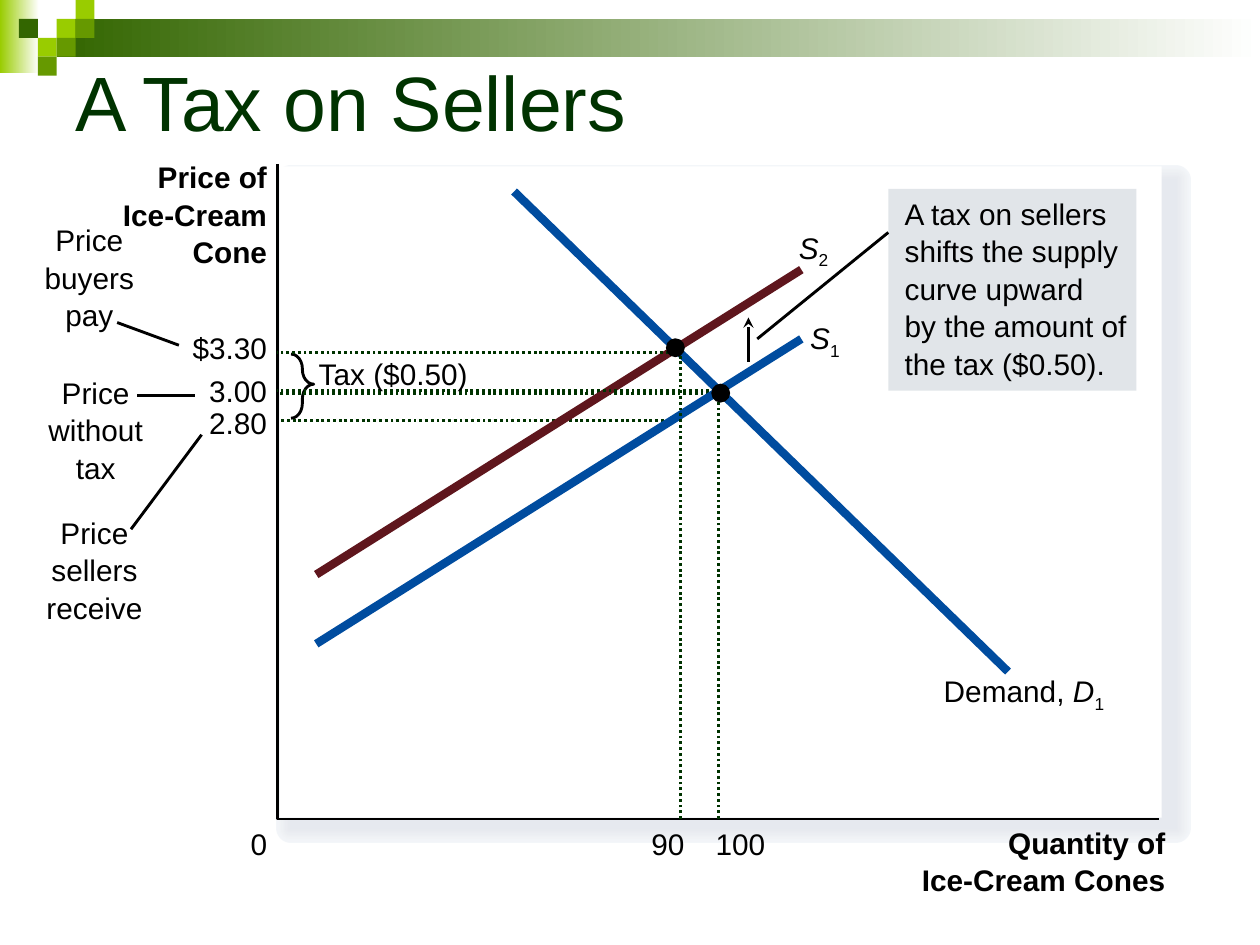
from dataclasses import dataclass

from lxml import etree
from pptx import Presentation, util as u
from pptx.dml.color import RGBColor
from pptx.enum import dml, shapes, text
from pptx.oxml.ns import qn

# The slide is a grid of 100 columns by 75 rows; all places are in cells.
prs = Presentation()
prs.slide_width, prs.slide_height = u.Inches(10), u.Inches(7.5)
COL, ROW = prs.slide_width / 100, prs.slide_height / 75
s = prs.slides.add_slide(prs.slide_layouts[6])

BLACK, WHITE, FOREST, BLUE, MAROON = "000000", "FFFFFF", "003300", "004C9F", "5F161D"
LIME, LEAF, DARK_LEAF = "99CC00", "669900", "336600"
THIN, THICK = 1.63, 4.75
LEFT, CENTER, RIGHT = text.PP_ALIGN.LEFT, text.PP_ALIGN.CENTER, text.PP_ALIGN.RIGHT
RECT, OVAL = shapes.MSO_SHAPE.RECTANGLE, shapes.MSO_SHAPE.OVAL

AXIS_X, AXIS_Y, PLOT_TOP, PLOT_RIGHT = 22.2, 64.9, 13.2, 92.2
DOT = 1.5
TAX_SHIFT = 5.5


@dataclass
class Label:
    """Lines of text set from, around or up to column x; _c marks a subscript c, *c an italic c."""
    lines: list[str]
    x: float
    y: float
    align: text.PP_ALIGN = LEFT
    bold: bool = False
    size: float = 17
    color: str = BLACK
    width: float = 24


@dataclass
class Line:
    start: tuple[float, float]
    end: tuple[float, float]
    color: str = BLACK
    width: float = THIN
    dotted: bool = False
    arrow_at_start: bool = False


@dataclass
class Equilibrium:
    quantity: str
    x: float
    y: float
    quantity_x: float


def rgb(color: str) -> RGBColor:
    return RGBColor.from_string(color)


def set_line(line, color: str, width: float, dotted: bool = False) -> None:
    line.color.rgb, line.width = rgb(color), u.Pt(width)
    if dotted:
        line.dash_style = dml.MSO_LINE.ROUND_DOT


def draw_shape(kind, x: float, y: float, w: float, h: float, fill: str | None = None,
               fade: bool = False, line: tuple[str, float] | None = None):
    sp = s.shapes.add_shape(kind, int(x * COL), int(y * ROW), int(w * COL), int(h * ROW))
    sp.shadow.inherit = False
    if fade:
        sp.fill.gradient()
        sp.fill.gradient_angle = 0
        for stop, color in zip(sp.fill.gradient_stops, (fill, WHITE)):
            stop.color.rgb = rgb(color)
    elif fill:
        sp.fill.solid()
        sp.fill.fore_color.rgb = rgb(fill)
    else:
        sp.fill.background()
    if line:
        set_line(sp.line, *line)
    else:
        sp.line.fill.background()
    return sp


def draw_path(points: list[tuple[float, float]], color: str, dotted: bool = False) -> None:
    builder = s.shapes.build_freeform(*points[0], scale=(COL, ROW))
    builder.add_line_segments(points[1:], close=False)
    sp = builder.convert_to_shape()
    sp.shadow.inherit = False
    sp.fill.background()
    set_line(sp.line, color, THIN, dotted)


def draw_line(item: Line) -> None:
    (x1, y1), (x2, y2) = item.start, item.end
    c = s.shapes.add_connector(shapes.MSO_CONNECTOR.STRAIGHT, int(x1 * COL), int(y1 * ROW),
                               int(x2 * COL), int(y2 * ROW))
    set_line(c.line, item.color, item.width, item.dotted)
    if item.arrow_at_start:
        etree.SubElement(c.line._get_or_add_ln(), qn("a:headEnd"), type="stealth")
    etree.SubElement(c._element.spPr, qn("a:effectLst"))


def add_runs(p, line: str, label: Label) -> None:
    """Split a line at its * and _ marks; each mark formats the one letter after it."""
    parts, i = [], 0
    while i < len(line):
        if line[i] in "*_":
            parts.append((line[i], line[i + 1]))
            i += 2
        else:
            end = min([n for n in (line.find(m, i) for m in "*_") if n >= 0], default=len(line))
            parts.append(("", line[i:end]))
            i = end
    for mark, words in parts:
        r = p.add_run()
        r.text = words
        for name, value in {"name": "Arial", "size": u.Pt(label.size), "bold": label.bold,
                            "italic": mark == "*"}.items():
            setattr(r.font, name, value)
        r.font.color.rgb = rgb(label.color)
        if mark == "_":
            r.font._element.set("baseline", "-25000")


def draw_label(label: Label) -> None:
    x = label.x - label.width * {LEFT: 0, CENTER: 0.5, RIGHT: 1}[label.align]
    height = 3 * len(label.lines) * label.size / 17
    tf = s.shapes.add_textbox(int(x * COL), int(label.y * ROW), int(label.width * COL),
                              int(height * ROW)).text_frame
    for name, value in {"margin_left": 0, "margin_right": 0, "margin_top": 0,
                        "margin_bottom": 0, "word_wrap": True}.items():
        setattr(tf, name, value)
    for i, line in enumerate(label.lines):
        p = tf.paragraphs[0] if i == 0 else tf.add_paragraph()
        p.alignment = label.align
        if len(label.lines) > 1:
            p.line_spacing = u.Pt(21.4)
        add_runs(p, line, label)


def draw_equilibrium(eq: Equilibrium) -> None:
    draw_path([(eq.x, 64.6), (eq.x, eq.y), (AXIS_X, eq.y)], FOREST, dotted=True)
    draw_shape(OVAL, eq.x - DOT / 2, eq.y - DOT / 2, DOT, DOT, BLACK)
    draw_label(Label([eq.quantity], eq.quantity_x, 65.5, width=6))


def draw_banner() -> None:
    draw_shape(RECT, 0, 0, 3.1, 5.8, LIME, fade=True)
    draw_shape(RECT, 4.5, 1.5, 95.5, 3, DARK_LEAF, fade=True)
    for column, row, color in [(3, 1, LIME), (4, 0, LIME), (4, 1, LEAF), (2, 2, LIME),
                               (1, 1, DARK_LEAF), (3, 2, LEAF), (2, 3, LEAF)]:
        draw_shape(RECT, column * 1.5, row * 1.5, 1.5, 1.5, color)


def draw_plot_area() -> None:
    """Soft edge of ever narrower outlines, then the white plot and its two axes."""
    edge = ["F3F6F9", "F2F4F8", "F1F4F7", "F0F2F5", "EEF1F4", "EDEFF3",
            "EBEEF2", "EAECF1", "E9EBF0", "E7EAEF", "E6E9EF"]
    for i, color in enumerate(edge):
        draw_shape(RECT, 23.1, 14.3, 70.2, 51.4, color, line=(color, 17.5 - 1.59 * i))
    draw_shape(RECT, AXIS_X, PLOT_TOP, PLOT_RIGHT - AXIS_X, AXIS_Y - PLOT_TOP, WHITE)
    draw_path([(AXIS_X, PLOT_TOP), (AXIS_X, AXIS_Y), (PLOT_RIGHT, AXIS_Y)], BLACK)


def main() -> None:
    draw_banner()
    draw_plot_area()
    draw_shape(RECT, 70.5, 15, 19.7, 16, "E1E5E9")
    brace = draw_shape(shapes.MSO_SHAPE.RIGHT_BRACE, 23.1, 28.1, 1.8, 5.1, line=(BLACK, THIN))
    brace.adjustments[0], brace.adjustments[1] = 0.65, 0.47

    for item in [
        Line((59.4, 25.2), (59.4, 28.7), width=1.75, arrow_at_start=True),
        Line((53.6, 33.4), (AXIS_X, 33.4), FOREST, dotted=True),
        Line((57.2, 31.2), (AXIS_X, 31.2), FOREST, dotted=True),
        Line((9.3, 25.6), (14.2, 27.4)),
        Line((10.9, 31.4), (15.5, 31.4)),
        Line((10.4, 42), (16, 34.5)),
        Line((60.1, 26.9), (70.5, 18.45)),
        Line((63.6, 26.9), (25.1, 51.1), BLUE, THICK),
        Line((63.6, 26.9 - TAX_SHIFT), (25.1, 51.1 - TAX_SHIFT), MAROON, THICK),
        Line((40.8, 15.2), (80, 53.3), BLUE, THICK),
    ]:
        draw_line(item)

    for eq in [Equilibrium("100", 57.2, 31.2, 56.8), Equilibrium("90", 53.6, 27.6, 51.7)]:
        draw_equilibrium(eq)

    for label in [
        Label(["A Tax on Sellers"], 6, 4.35, size=44, color=FOREST, width=88),
        Label(["Price of", "Ice-Cream", "Cone"], 21.2, 12.5, RIGHT, bold=True),
        Label(["Quantity of", "Ice-Cream Cones"], 92.5, 65.3, RIGHT, bold=True),
        Label(["Price", "buyers", "pay"], 7.1, 17.5, CENTER, width=10),
        Label(["Price", "without", "tax"], 7.6, 29.6, CENTER, width=10),
        Label(["Price", "sellers", "receive"], 7.5, 40.7, CENTER, width=10),
        Label(["$3.30"], 21.2, 26.2, RIGHT, width=7),
        Label(["3.00"], 21.2, 29.6, RIGHT, width=7),
        Label(["2.80"], 21.2, 32.1, RIGHT, width=7),
        Label(["0"], 21.2, 65.5, RIGHT, width=3),
        Label(["Tax ($0.50)"], 25.3, 28.2, width=13),
        Label(["*S_1"], 64.3, 25.4, width=4),
        Label(["*S_2"], 63.4, 18.2, width=4),
        Label(["Demand, *D_1"], 74.9, 53.4, width=15),
        Label(["A tax on sellers", "shifts the supply", "curve upward",
               "by the amount of", "the tax ($0.50)."], 71.8, 15.4, width=18.5),
    ]:
        draw_label(label)
    prs.save("out.pptx")


if __name__ == "__main__":
    main()
